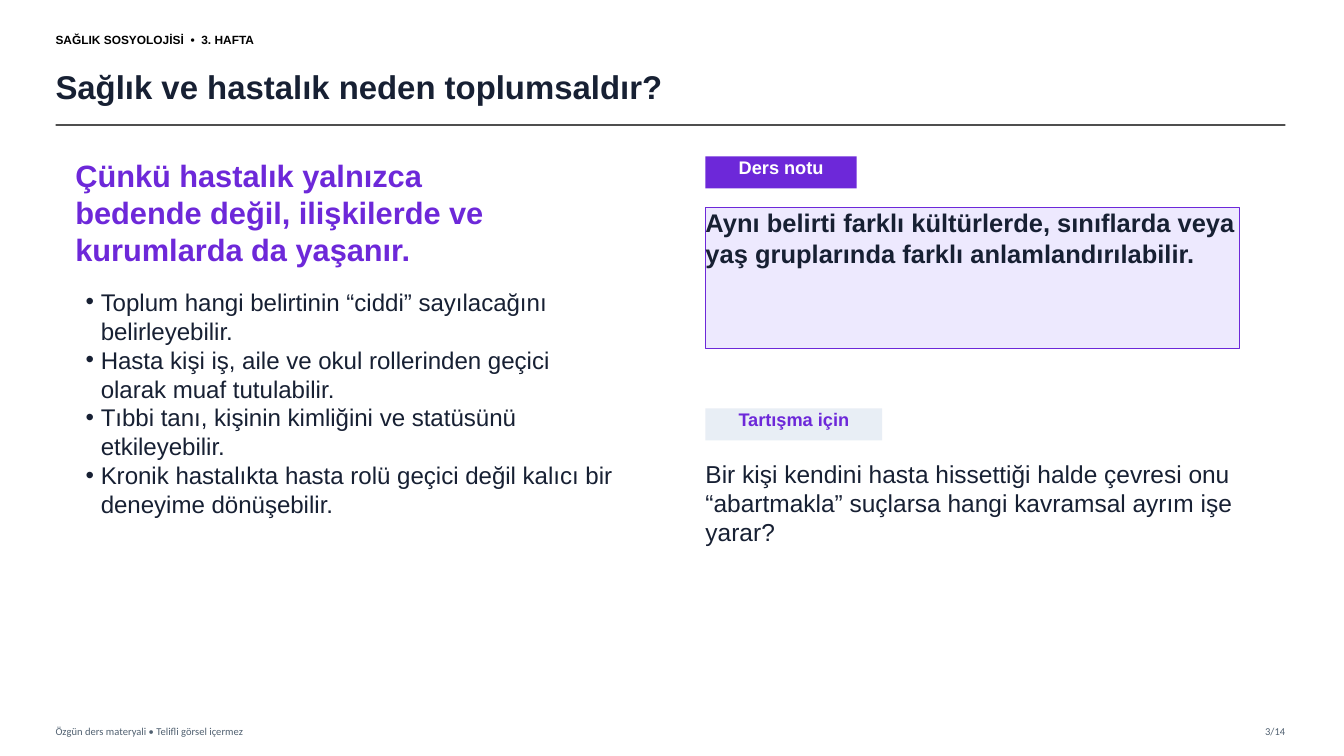
from lxml.etree import SubElement
from pptx import Presentation
from pptx.dml.color import RGBColor
from pptx.enum.shapes import MSO_CONNECTOR, MSO_SHAPE
from pptx.enum.text import MSO_ANCHOR, PP_ALIGN
from pptx.oxml.ns import qn
from pptx.util import Cm, Pt

COLORS = {
    "ink": "172033",
    "black": "000000",
    "white": "FFFFFF",
    "purple": "6D28D9",
    "lilac": "EDE9FE",
    "mist": "E8EEF5",
    "slate": "506070",
    "rule": "333333",
}
LEFT, RIGHT = 1.4, 32.39
COLUMN, COLUMN_WIDTH = 17.78, 13.46
FOOTER_TOP, FOOTER_HEIGHT = 18.14, 0.56
BULLET_INDENT = 0.38


def color(name):
    return RGBColor.from_string(COLORS[name])


def add_text(text, box, size, ink="ink", font="Arial", bold=False, align=PP_ALIGN.LEFT,
             anchor=MSO_ANCHOR.TOP, fill=None, line=None, bullets=False):
    """Add text, one paragraph a line, in a text box or, given a fill, in a rectangle."""
    place = [Cm(n) for n in box]
    if fill:
        sp = s.shapes.add_shape(MSO_SHAPE.RECTANGLE, *place)
        sp.shadow.inherit = False
        sp.fill.solid()
        sp.fill.fore_color.rgb = color(fill)
        if line:
            sp.line.color.rgb = color(line)
            sp.line.width = Pt(1)
        else:
            sp.line.fill.background()
    else:
        sp = s.shapes.add_textbox(*place)
    tf = sp.text_frame
    tf.word_wrap = True
    tf.vertical_anchor = anchor
    tf.margin_left = tf.margin_top = tf.margin_right = tf.margin_bottom = 0
    tf.text = text
    for p in tf.paragraphs:
        p.alignment = align
        if bullets:
            pPr = p._p.get_or_add_pPr()
            pPr.set("marL", str(Cm(BULLET_INDENT)))
            pPr.set("indent", str(-Cm(BULLET_INDENT)))
            SubElement(pPr, qn("a:buFont"), typeface=font)
            SubElement(pPr, qn("a:buChar"), char="•")
        for r in p.runs:
            r.font.name = font
            r.font.size = Pt(size)
            r.font.bold = bold
            r.font.color.rgb = color(ink)


prs = Presentation()
prs.slide_width, prs.slide_height = Cm(33.87), Cm(19.05)
s = prs.slides.add_slide(prs.slide_layouts[6])
s.background.fill.solid()
s.background.fill.fore_color.rgb = color("white")

# Header
add_text("SAĞLIK SOSYOLOJİSİ  •  3. HAFTA", (LEFT, 0.64, 9.14, 0.71), 8.5,
         ink="black", bold=True, anchor=MSO_ANCHOR.MIDDLE)
add_text("Sağlık ve hastalık neden toplumsaldır?", (LEFT, 1.47, 30.35, 1.4), 23.5,
         bold=True, anchor=MSO_ANCHOR.MIDDLE)
rule = s.shapes.add_connector(MSO_CONNECTOR.STRAIGHT, Cm(LEFT), Cm(3.15), Cm(RIGHT), Cm(3.15))
rule.line.color.rgb = color("rule")
rule.line.width = Pt(1.2)
SubElement(rule._element.spPr.find(".//" + qn("a:srgbClr")), qn("a:alpha"), val="85000")
SubElement(rule._element.spPr, qn("a:effectLst"))

# Footer
add_text("Özgün ders materyali • Telifli görsel içermez", (LEFT, FOOTER_TOP, 15.24, FOOTER_HEIGHT),
         7.5, ink="slate", font="Calibri", anchor=MSO_ANCHOR.MIDDLE)
add_text("3/14", (30.74, FOOTER_TOP, 1.65, FOOTER_HEIGHT), 7.5, ink="slate", font="Calibri",
         align=PP_ALIGN.RIGHT, anchor=MSO_ANCHOR.MIDDLE)

# Left column
add_text("Çünkü hastalık yalnızca bedende değil, ilişkilerde ve kurumlarda da yaşanır.",
         (1.9, 3.94, 11.68, 2.54), 22, ink="purple", bold=True)
reasons = [
    "Toplum hangi belirtinin “ciddi” sayılacağını belirleyebilir.",
    "Hasta kişi iş, aile ve okul rollerinden geçici olarak muaf tutulabilir.",
    "Tıbbi tanı, kişinin kimliğini ve statüsünü etkileyebilir.",
    "Kronik hastalıkta hasta rolü geçici değil kalıcı bir deneyime dönüşebilir.",
]
add_text("\n".join(reasons), (2.16, 7.24, 13.34, 6.86), 17.2, bullets=True)

# Right column
for label, top, width, fill, ink in [
    ("Ders notu", 3.94, 3.81, "purple", "white"),
    ("Tartışma için", 10.29, 4.45, "mist", "purple"),
]:
    add_text(label, (COLUMN, top, width, 0.81), 13, ink=ink, bold=True,
             align=PP_ALIGN.CENTER, fill=fill)
add_text("Aynı belirti farklı kültürlerde, sınıflarda veya yaş gruplarında farklı anlamlandırılabilir.",
         (COLUMN, 5.23, COLUMN_WIDTH, 3.56), 18.2, bold=True, fill="lilac", line="purple")
add_text("Bir kişi kendini hasta hissettiği halde çevresi onu “abartmakla” suçlarsa "
         "hangi kavramsal ayrım işe yarar?",
         (COLUMN, 11.56, COLUMN_WIDTH, 3.18), 17.5)

prs.save("out.pptx")
